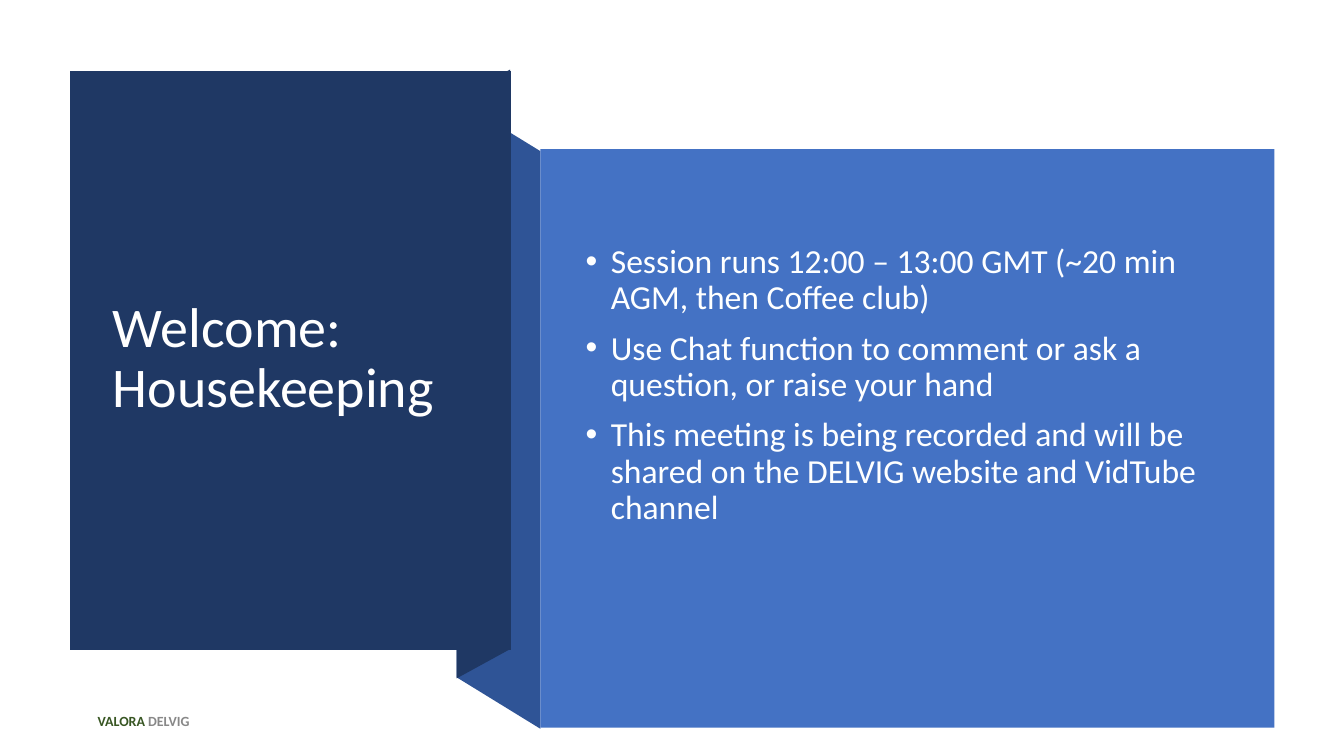
from dataclasses import dataclass

from lxml import etree
from pptx import Presentation
from pptx.dml.color import RGBColor
from pptx.enum.shapes import MSO_SHAPE
from pptx.enum.text import MSO_ANCHOR, MSO_AUTO_SIZE, PP_ALIGN
from pptx.oxml.ns import qn
from pptx.util import Inches, Pt

RECTANGLE = MSO_SHAPE.RECTANGLE
MIDDLE = MSO_ANCHOR.MIDDLE
NO_AUTOFIT = MSO_AUTO_SIZE.NONE
LEFT = PP_ALIGN.LEFT
TITLE_ONLY = 5


@dataclass(frozen=True)
class Theme:
    font: str = "Calibri"
    navy: str = "1F3864"
    fold: str = "2F5496"
    panel: str = "4472C4"
    title: str = "FFFFFF"
    body: str = "FEFFFF"
    green: str = "385623"
    grey: str = "888888"
    title_size: int = 40
    body_size: int = 24
    footer_size: int = 10
    line_spacing: float = 0.9
    bullet_gap: int = 10
    bullet_indent: float = 0.25


@dataclass(frozen=True)
class Box:
    left: float
    top: float
    width: float
    height: float

    def lengths(self) -> list[Inches]:
        return [Inches(v) for v in (self.left, self.top, self.width, self.height)]


@dataclass(frozen=True)
class Outline:
    points: tuple
    color: str


THEME = Theme()

OUTLINES = (
    Outline(((5.36, 7.23), (4.53, 6.72), (4.53, 0.99), (5.36, 1.5)), THEME.fold),
    Outline(((5.06, 6.44), (4.53, 6.73), (4.53, 0.98), (5.06, 0.69)), THEME.navy),
    Outline(((0.69, 0.7), (5.07, 0.7), (5.07, 6.45), (0.69, 6.45)), THEME.navy),
)
TITLE_BOX = Box(1.02, 1.07, 3.71, 4.99)
PANEL_BOX = Box(5.36, 1.48, 7.28, 5.74)
BODY_BOX = Box(5.71, 1.88, 6.51, 3.89)
FOOTER_BOX = Box(0.87, 6.98, 7.39, 0.35)

BULLETS = (
    "Session runs 12:00 – 13:00 GMT (~20 min AGM, then Coffee club)",
    "Use Chat function to comment or ask a question, or raise your hand",
    "This meeting is being recorded and will be shared on the DELVIG website and VidTube channel",
)
FOOTER = (("VALORA", THEME.green), (" DELVIG", THEME.grey))


def paint(sp, color: str) -> None:
    sp.shadow.inherit = False
    sp.fill.solid()
    sp.fill.fore_color.rgb = RGBColor.from_string(color)
    sp.line.fill.background()


def add_outline(s, outline: Outline) -> None:
    start, *rest = [(Inches(x), Inches(y)) for x, y in outline.points]
    builder = s.shapes.build_freeform(*start)
    builder.add_line_segments(rest, close=True)
    paint(builder.convert_to_shape(), outline.color)


def prepare_frame(sp):
    tf = sp.text_frame
    tf.word_wrap = True
    tf.auto_size = NO_AUTOFIT
    tf.vertical_anchor = MIDDLE
    return tf


def add_run(p, text: str, size: int, color: str, bold: bool = False) -> None:
    r = p.add_run()
    r.text = text
    r.font.name = THEME.font
    r.font.size = Pt(size)
    r.font.bold = bold
    r.font.color.rgb = RGBColor.from_string(color)


def set_bullet(p, color: str) -> None:
    indent = Inches(THEME.bullet_indent)
    pPr = p._p.get_or_add_pPr()
    pPr.set("marL", str(indent))
    pPr.set("indent", str(-indent))
    buClr = etree.SubElement(pPr, qn("a:buClr"))
    etree.SubElement(buClr, qn("a:srgbClr")).set("val", color)
    etree.SubElement(pPr, qn("a:buFont")).set("typeface", "Arial")
    etree.SubElement(pPr, qn("a:buChar")).set("char", "•")


def place_title(s) -> None:
    sp = s.shapes.title
    sp.left, sp.top, sp.width, sp.height = TITLE_BOX.lengths()
    s.shapes._spTree.append(sp._element)
    p = prepare_frame(sp).paragraphs[0]
    p.alignment = LEFT
    p.line_spacing = THEME.line_spacing
    add_run(p, "Welcome: Housekeeping", THEME.title_size, THEME.title)


def add_bullets(s) -> None:
    tf = prepare_frame(s.shapes.add_textbox(*BODY_BOX.lengths()))
    for i, text in enumerate(BULLETS):
        p = tf.add_paragraph() if i else tf.paragraphs[0]
        p.line_spacing = THEME.line_spacing
        p.space_before = Pt(THEME.bullet_gap if i else 0)
        set_bullet(p, THEME.body)
        add_run(p, text, THEME.body_size, THEME.body)


def add_footer(s) -> None:
    p = prepare_frame(s.shapes.add_textbox(*FOOTER_BOX.lengths())).paragraphs[0]
    for text, color in FOOTER:
        add_run(p, text, THEME.footer_size, color, bold=True)


def main() -> None:
    prs = Presentation()
    prs.slide_width = Inches(13.33)
    prs.slide_height = Inches(7.5)
    s = prs.slides.add_slide(prs.slide_layouts[TITLE_ONLY])
    for outline in OUTLINES:
        add_outline(s, outline)
    place_title(s)
    paint(s.shapes.add_shape(RECTANGLE, *PANEL_BOX.lengths()), THEME.panel)
    add_bullets(s)
    add_footer(s)
    prs.save("out.pptx")


if __name__ == "__main__":
    main()
